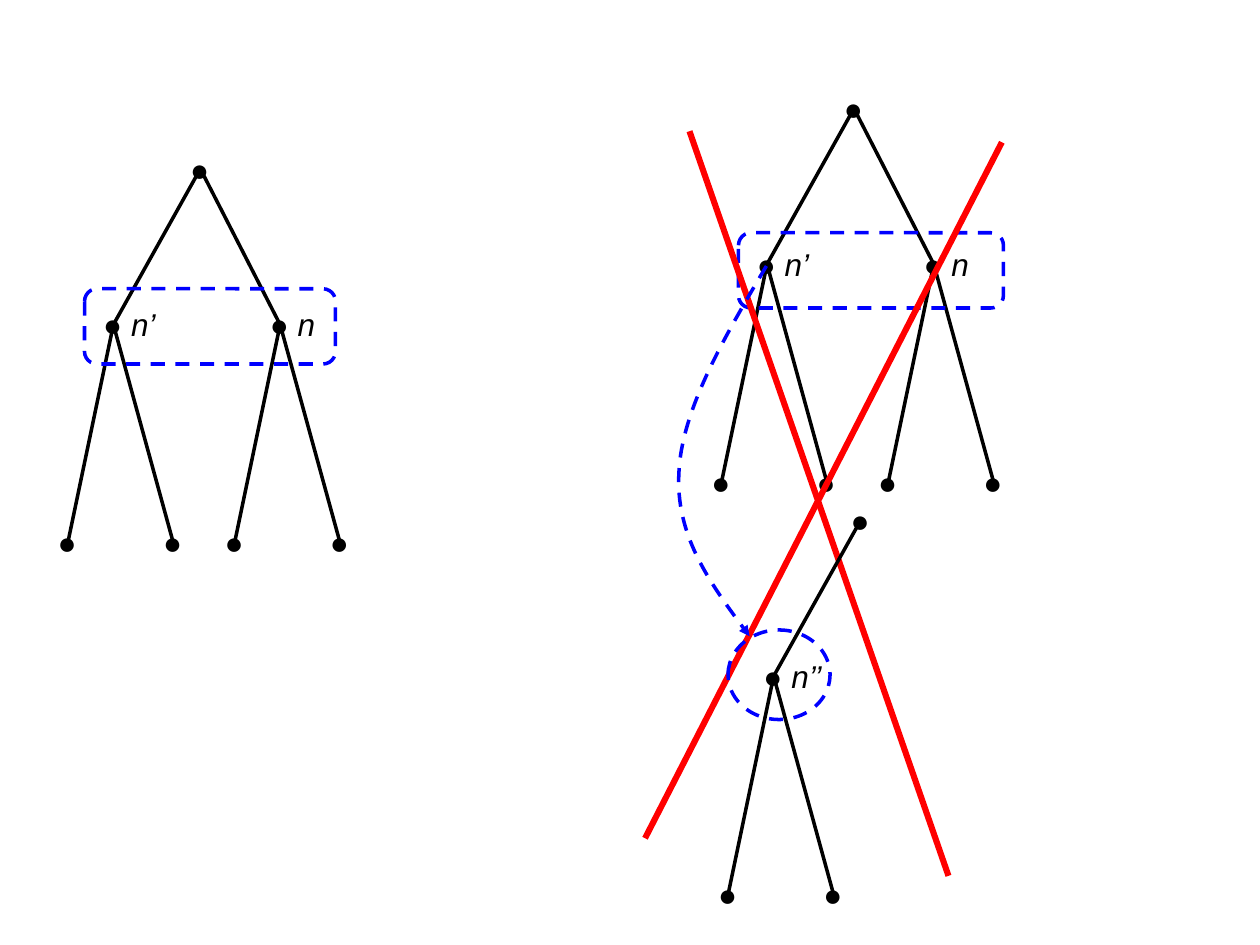
"""Build a slide of search trees with two crossed-out branches."""
from lxml.etree import SubElement
from pptx import Presentation
from pptx.dml.color import RGBColor
from pptx.enum.dml import MSO_LINE
from pptx.enum.shapes import MSO_CONNECTOR, MSO_SHAPE
from pptx.enum.text import MSO_AUTO_SIZE
from pptx.oxml.ns import qn
from pptx.util import Pt

BLACK, BLUE, RED = "000000", "0000FF", "FF0000"
LEVEL_1, LEVEL_2 = 89, 213.5
LEAF_OFFSETS = (34.2, -26)
N_PRIME = (-49.7, "n’", 44.6, False)
N = (45.6, "n", 40.3, False)
N_DOUBLE_PRIME = (-49.7, "n’’", 59, True)


def color(hex_code):
    return RGBColor.from_string(hex_code)


def set_line(shape, hex_code, width):
    shape.line.color.rgb = color(hex_code)
    shape.line.width = Pt(width)


def add_line(shapes, start, end, hex_code=BLACK, width=2):
    line = shapes.add_connector(
        MSO_CONNECTOR.STRAIGHT, *(Pt(value) for value in (*start, *end)))
    set_line(line, hex_code, width)
    SubElement(line._element.spPr, qn("a:effectLst"))


def style_dashed(shape):
    shape.shadow.inherit = False
    shape.fill.background()
    set_line(shape, BLUE, 2)
    shape.line.dash_style = MSO_LINE.DASH


def add_dashed_outline(shapes, kind, left, top, width, height):
    style_dashed(shapes.add_shape(
        kind, Pt(left), Pt(top), Pt(width), Pt(height)))


def add_dashed_arrow(shapes, points):
    """Draw a curve through cubic Bezier points, with an arrowhead at its end."""
    start, *others = [(Pt(x), Pt(y)) for x, y in points]
    builder = shapes.build_freeform(*start)
    builder.add_line_segments(others, close=False)
    arrow = builder.convert_to_shape()
    style_dashed(arrow)
    outline = arrow._element.find(".//" + qn("a:path"))
    segments = outline.findall(qn("a:lnTo"))
    for first in range(0, len(segments), 3):
        curve = SubElement(outline, qn("a:cubicBezTo"))
        for segment in segments[first:first + 3]:
            curve.append(segment[0])
            outline.remove(segment)
    SubElement(arrow.line._get_or_add_ln(), qn("a:tailEnd"), type="triangle")


def add_run(paragraph, text, italic=None):
    run = paragraph.add_run()
    run.text = text
    run.font.name = "Arial"
    run.font.size = Pt(18)
    run.font.italic = italic
    run.font.color.rgb = color(BLACK)


def add_node(shapes, center, label="", width=25.2, wrap=False):
    x, y = center
    node = shapes.add_textbox(Pt(x - 12.9), Pt(y - 14.6), Pt(width), Pt(29))
    frame = node.text_frame
    frame.word_wrap = wrap
    frame.auto_size = MSO_AUTO_SIZE.SHAPE_TO_FIT_TEXT
    paragraph = frame.paragraphs[0]
    add_run(paragraph, "● " if label else "●")
    if label:
        add_run(paragraph, label, italic=True)


def add_tree(shapes, root, branches):
    """Draw a root whose labelled children each carry two leaves."""
    x, y = root
    nodes = [(root,)]
    for dx, *label in branches:
        child = (x + dx, y + LEVEL_1)
        add_line(shapes, root, child)
        nodes.append((child, *label))
        for offset in LEAF_OFFSETS:
            leaf = (child[0] + offset, y + LEVEL_2)
            add_line(shapes, child, leaf)
            nodes.append((leaf,))
    for node in nodes:
        add_node(shapes, *node)


def main():
    deck = Presentation()
    deck.slide_width, deck.slide_height = Pt(720), Pt(540)
    shapes = deck.slides.add_slide(deck.slide_layouts[6]).shapes

    add_tree(shapes, (114.5, 96.5), [N_PRIME, N])
    add_dashed_outline(
        shapes, MSO_SHAPE.ROUNDED_RECTANGLE, 48.3, 165, 143.4, 43)
    add_tree(shapes, (488, 62), [N_PRIME, N])
    add_dashed_outline(
        shapes, MSO_SHAPE.ROUNDED_RECTANGLE, 422, 133, 151.4, 43)

    add_line(shapes, (394, 75), (542, 500.5), RED, 3.5)
    add_line(shapes, (572.5, 81.3), (368.6, 479), RED, 3.5)

    add_tree(shapes, (491.8, 297.4), [N_DOUBLE_PRIME])
    move = shapes.add_group_shape().shapes
    add_dashed_outline(move, MSO_SHAPE.OVAL, 416, 360, 58.3, 51.2)
    add_dashed_arrow(move, [
        (438, 152), (413.3, 193.7), (389.5, 234.7), (388, 270),
        (386, 305.3), (406.8, 334.8), (428.4, 363.6)])

    deck.save("out.pptx")


if __name__ == "__main__":
    main()
